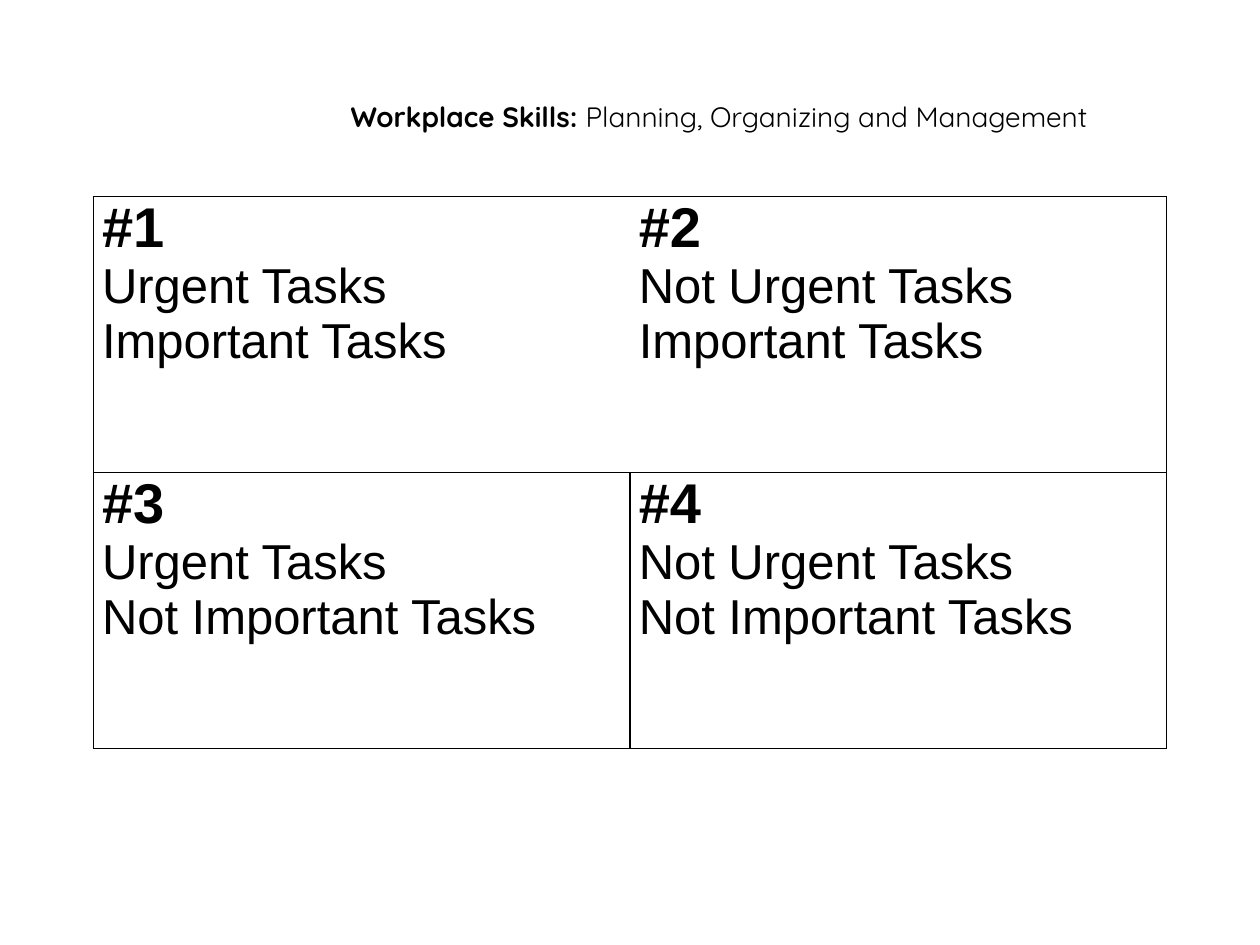
from typing import NamedTuple

from lxml import etree
from pptx import Presentation
from pptx import util as u
from pptx.dml.color import RGBColor
from pptx.enum import text
from pptx.oxml import ns

WIDTH, HEIGHT = u.Inches(10), u.Inches(7.5)
BLACK = "000000"
BORDER_WIDTH = u.Pt(0.75)


class Area(NamedTuple):
    """A box given as shares of the slide's width and height."""
    left: float
    top: float
    width: float
    height: float

    def lengths(self) -> list[int]:
        return [round(share * side) for share, side in zip(self, (WIDTH, HEIGHT) * 2)]


class Quadrant(NamedTuple):
    row: int
    column: int
    number: str
    urgency: str
    importance: str
    borders: str


TITLE_AREA = Area(0.06, 0.04, 0.813, 1.25 / 7.5)
MATRIX_AREA = Area(0.074, 1.56 / 7.5, 0.852, 4.38 / 7.5)
QUADRANTS = [
    Quadrant(0, 0, "#1", "Urgent Tasks", "Important Tasks", "LTB"),
    Quadrant(0, 1, "#2", "Not Urgent Tasks", "Important Tasks", "RTB"),
    Quadrant(1, 0, "#3", "Urgent Tasks", "Not Important Tasks", "LRTB"),
    Quadrant(1, 1, "#4", "Not Urgent Tasks", "Not Important Tasks", "LRTB"),
]


def set_font(font, name: str, size: float, bold: bool = False, color: str = BLACK) -> None:
    font.name, font.size, font.bold = name, u.Pt(size), bold
    font.color.rgb = RGBColor.from_string(color)


def set_borders(cell, sides: str) -> None:
    """Draw the listed sides (of L, R, T, B) and clear the others."""
    properties = cell._tc.get_or_add_tcPr()
    for side in "LRTB":
        line = etree.SubElement(properties, ns.qn(f"a:ln{side}"), w=str(BORDER_WIDTH))
        if side in sides:
            fill = etree.SubElement(line, ns.qn("a:solidFill"))
            etree.SubElement(fill, ns.qn("a:srgbClr"), val=BLACK)
        else:
            etree.SubElement(line, ns.qn("a:noFill"))


def add_title(slide) -> None:
    frame = slide.shapes.add_textbox(*TITLE_AREA.lengths()).text_frame
    frame.word_wrap = True
    frame.vertical_anchor = text.MSO_ANCHOR.MIDDLE
    paragraph = frame.paragraphs[0]
    paragraph.alignment = text.PP_ALIGN.RIGHT
    for words, bold in (("Workplace Skills: ", True),
                        ("Planning, Organizing and Management", False)):
        run = paragraph.add_run()
        run.text = words
        set_font(run.font, "Quicksand", 16, bold)


def fill_quadrant(cell, quadrant: Quadrant) -> None:
    set_borders(cell, quadrant.borders)
    cell.fill.background()
    cell.margin_left = cell.margin_right = u.Inches(0.07)
    cell.margin_top = cell.margin_bottom = 0
    cell.text = "\n".join((quadrant.number, quadrant.urgency, quadrant.importance))
    heading, *tasks = cell.text_frame.paragraphs
    set_font(heading.font, "Arial", 32, bold=True)
    for paragraph in tasks:
        set_font(paragraph.font, "Arial", 28)


def add_matrix(slide) -> None:
    table = slide.shapes.add_table(2, 2, *MATRIX_AREA.lengths()).table
    table.first_row = table.horz_banding = False
    for quadrant in QUADRANTS:
        fill_quadrant(table.cell(quadrant.row, quadrant.column), quadrant)


def main() -> None:
    presentation = Presentation()
    presentation.slide_width, presentation.slide_height = WIDTH, HEIGHT
    slide = presentation.slides.add_slide(presentation.slide_layouts[6])
    add_title(slide)
    add_matrix(slide)
    presentation.save("out.pptx")


if __name__ == "__main__":
    main()
